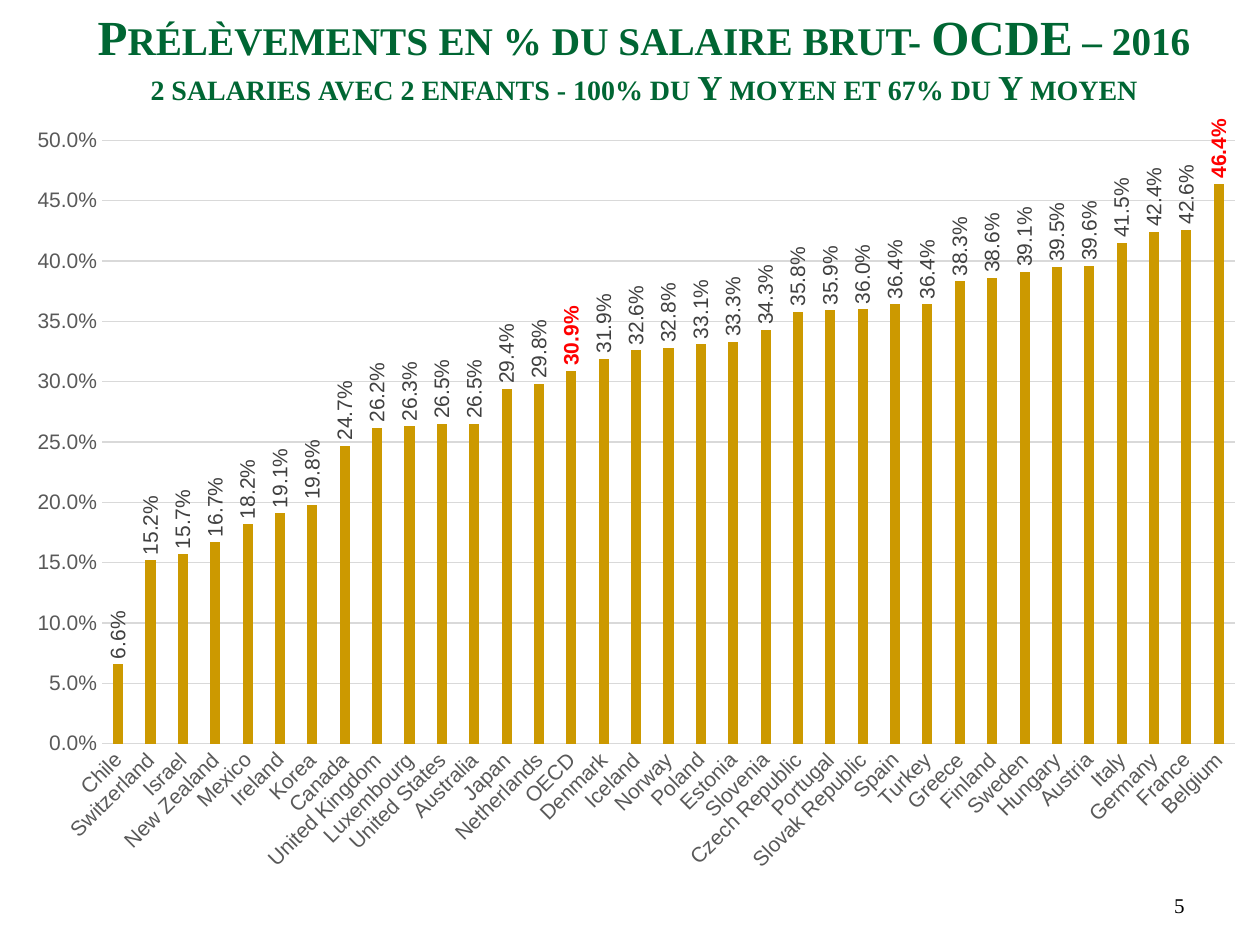
from lxml import etree
from pptx import Presentation
from pptx.chart.data import CategoryChartData
from pptx.dml.color import RGBColor
from pptx.enum.chart import XL_CHART_TYPE, XL_LABEL_POSITION, XL_TICK_MARK
from pptx.enum.text import MSO_ANCHOR, PP_ALIGN
from pptx.oxml import parse_xml
from pptx.oxml.ns import nsdecls
from pptx.util import Cm, Pt

BARS = XL_CHART_TYPE.COLUMN_CLUSTERED
OUTSIDE = XL_LABEL_POSITION.OUTSIDE_END
NO_TICK = XL_TICK_MARK.NONE
TOP, BOTTOM = MSO_ANCHOR.TOP, MSO_ANCHOR.BOTTOM
CENTER, RIGHT = PP_ALIGN.CENTER, PP_ALIGN.RIGHT

SERIF, SANS = "Times New Roman", "Arial"
GREEN, GOLD, RED = "006633", "CC9900", "FF0000"
BLACK, GREY, DARK, PALE = "000000", "595959", "404040", "D9D9D9"
PERCENT = "0.0%"

RATES = {
    "Chile": 6.6, "Switzerland": 15.2, "Israel": 15.7, "New Zealand": 16.7,
    "Mexico": 18.2, "Ireland": 19.1, "Korea": 19.8, "Canada": 24.7,
    "United Kingdom": 26.2, "Luxembourg": 26.3, "United States": 26.5,
    "Australia": 26.5, "Japan": 29.4, "Netherlands": 29.8, "OECD": 30.9,
    "Denmark": 31.9, "Iceland": 32.6, "Norway": 32.8, "Poland": 33.1,
    "Estonia": 33.3, "Slovenia": 34.3, "Czech Republic": 35.8,
    "Portugal": 35.9, "Slovak Republic": 36.0, "Spain": 36.4,
    "Turkey": 36.4, "Greece": 38.3, "Finland": 38.6, "Sweden": 39.1,
    "Hungary": 39.5, "Austria": 39.6, "Italy": 41.5, "Germany": 42.4,
    "France": 42.6, "Belgium": 46.4,
}
MARKED = ("OECD", "Belgium")


def color(code):
    return RGBColor.from_string(code)


def style(font, face, size, code, bold=False):
    font.name, font.size, font.bold = face, Pt(size), bold
    font.color.rgb = color(code)


def turn(root, angle):
    for body in root.xpath(".//a:bodyPr"):
        body.set("rot", str(angle * 60000))
        body.set("vert", "horz")


class Deck:
    def __init__(self):
        self.show = Presentation()
        self.show.slide_width, self.show.slide_height = Cm(25.4), Cm(19.05)
        self.slide = self.show.slides.add_slide(self.show.slide_layouts[6])

    def box(self, left, top, width, height, anchor, align):
        shape = self.slide.shapes.add_textbox(
            Cm(left), Cm(top), Cm(width), Cm(height))
        frame = shape.text_frame
        frame.word_wrap = True
        frame.vertical_anchor = anchor
        para = frame.paragraphs[0]
        para.alignment = align
        return para

    def title(self, lines, *place):
        para = self.box(*place, TOP, CENTER)
        for index, (text, size) in enumerate(lines):
            if index:
                para.add_line_break()
            run = para.add_run()
            run.text = text
            style(run.font, SERIF, size, GREEN, True)
            run.font._element.set("cap", "small")

    def number(self, text, *place):
        para = self.box(*place, BOTTOM, RIGHT)
        para.text = text
        style(para.font, SERIF, 12, BLACK)

    def chart(self, rates, marked, left, top, width, height):
        data = CategoryChartData(number_format=PERCENT)
        data.categories = list(rates)
        data.add_series("Series 1", [round(v / 100, 3) for v in rates.values()])
        chart = self.slide.shapes.add_chart(
            BARS, Cm(left), Cm(top), Cm(width), Cm(height), data).chart
        chart.has_legend = chart.has_title = False
        style(chart.font, SANS, 10, BLACK)

        # Axes
        for axis in (chart.category_axis, chart.value_axis):
            axis.major_tick_mark = axis.minor_tick_mark = NO_TICK
            style(axis.tick_labels.font, SANS, 12, GREY)
        cats, vals = chart.category_axis, chart.value_axis
        turn(cats._element, -45)
        vals.minimum_scale, vals.maximum_scale, vals.major_unit = 0, 0.5, 0.05
        vals.tick_labels.number_format = PERCENT
        vals.tick_labels.number_format_is_linked = False
        vals.format.line.fill.background()
        for line in (cats.format.line, vals.major_gridlines.format.line):
            line.color.rgb = color(PALE)
            line.width = Pt(0.75)

        # Bars
        plot = chart.plots[0]
        plot.vary_by_categories = False
        plot.gap_width, plot.overlap = 219, -27
        series = plot.series[0]
        series.format.fill.solid()
        series.format.fill.fore_color.rgb = color(GOLD)

        # Upright labels, the marked ones in red
        labels = series.data_labels
        labels.show_value = True
        labels.position = OUTSIDE
        labels.number_format = PERCENT
        labels.number_format_is_linked = False
        style(labels.font, SANS, 12, DARK)
        names = list(rates)
        for name in marked:
            label = series.points[names.index(name)].data_label
            style(label.font, SANS, 12, RED, True)
            label.position = OUTSIDE
        turn(labels._element, -90)
        self.layout(chart, x=0.07, y=0.03, w=0.91, h=0.78)

    def layout(self, chart, **parts):
        area = chart._chartSpace.chart.plotArea
        for old in area.xpath("c:layout"):
            area.remove(old)
        node = parse_xml(
            f'<c:layout {nsdecls("c")}><c:manualLayout>'
            '<c:layoutTarget val="inner"/><c:xMode val="edge"/>'
            '<c:yMode val="edge"/></c:manualLayout></c:layout>')
        for key, value in parts.items():
            tag = etree.QName(node).namespace
            etree.SubElement(node[0], f"{{{tag}}}{key}").set("val", str(value))
        area.insert(0, node)


def main():
    deck = Deck()
    # Chart
    deck.chart(RATES, MARKED, 0.3, 2.36, 25.1, 15.6)
    # Title
    deck.title([
        ("Prélèvements en % du salaire brut- OCDE – 2016", 28),
        ("2 salaries avec 2 enfants - 100% du Y moyen et 67% du Y moyen", 20),
    ], 1.07, 0, 23.83, 3.18)
    # Slide number
    deck.number("5", 18.21, 17.35, 5.92, 1.27)
    deck.show.save("out.pptx")


if __name__ == "__main__":
    main()
